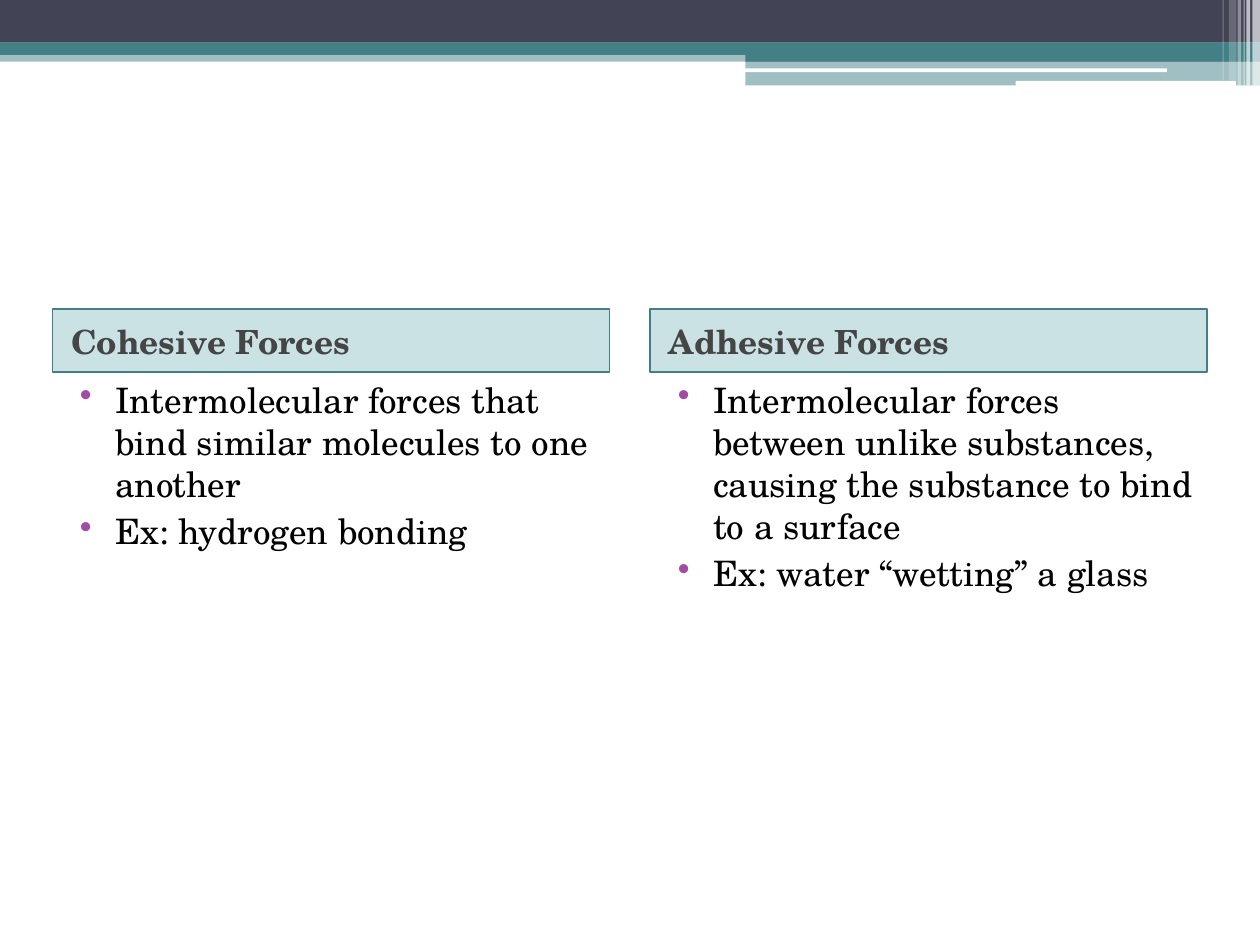
"""Build a slide comparing cohesive and adhesive forces."""
from lxml.etree import SubElement
from pptx import Presentation
from pptx.dml.color import RGBColor
from pptx.enum.shapes import MSO_SHAPE as Shape
from pptx.enum.text import MSO_ANCHOR as Anchor, PP_ALIGN as Align
from pptx.oxml.ns import qn
from pptx.util import Pt

FONT = "TeX Gyre Schola"
NAVY, TEAL, WHITE = "424456", "438086", "FFFFFF"
BANDS = [
    (Shape.RECTANGLE, 0, 28.8, 720, 6.48, TEAL, 50),
    (Shape.RECTANGLE, 0, 0, 720, 24.4, NAVY, 100),
    (Shape.RECTANGLE, 0, 24.2, 720, 7.2, TEAL, 100),
    (Shape.RECTANGLE, 426, 28, 294, 7.2, TEAL, 100),
    (Shape.RECTANGLE, 426, 34.8, 294, 14, TEAL, 50),
    (Shape.ROUNDED_RECTANGLE, 425.6, 39.1, 241.2, 2.16, WHITE, 100),
    (Shape.ROUNDED_RECTANGLE, 580.4, 46.3, 126, 2.88, WHITE, 100),
]
STRIPES = [
    (715.6, 4.4, 49, 65),
    (712.2, 2.16, 49, 65),
    (710.6, 0.72, 49, 60),
    (707.2, 2.16, 49, 40),
    (702.2, 4.32, 46.1, 20),
    (698.6, 0.72, 46.1, 30),
]
COLUMNS = [
    ("Cohesive Forces", [
        "Intermolecular forces that bind similar molecules to one another",
        "Ex: hydrogen bonding",
    ]),
    ("Adhesive Forces", [
        "Intermolecular forces between unlike substances, causing the substance to bind to a surface",
        "Ex: water “wetting” a glass",
    ]),
]
MARGIN, COLUMN_WIDTH, SLIDE_WIDTH = 30, 318.4, 720
HEADING_TOP, HEADING_HEIGHT, BODY_HEIGHT = 176.8, 36, 306


def color(value):
    return RGBColor.from_string(value)


def add_block(slide, kind, box, fill, opacity):
    shape = slide.shapes.add_shape(kind, *map(Pt, box))
    shape.shadow.inherit = False
    shape.line.fill.background()
    shape.fill.solid()
    shape.fill.fore_color.rgb = color(fill)
    if opacity < 100:
        rgb = shape.fill._xPr.find(qn("a:solidFill"))[0]
        SubElement(rgb, qn("a:alpha"), val=str(opacity * 1000))
    return shape


def write(frame, lines, size, text_color, indent, hanging=0, bold=False):
    frame.word_wrap = True
    for number, line in enumerate(lines):
        paragraph = frame.add_paragraph() if number else frame.paragraphs[0]
        paragraph.text = line
        paragraph.alignment = Align.LEFT
        paragraph.space_before = Pt(3)
        paragraph.font.name = FONT
        paragraph.font.size = Pt(size)
        paragraph.font.bold = bold
        paragraph.font.color.rgb = color(text_color)
        properties = paragraph._p.get_or_add_pPr()
        properties.set("marL", str(Pt(indent)))
        properties.set("indent", str(Pt(-hanging)))
        if hanging:
            bullet_color = SubElement(properties, qn("a:buClr"))
            SubElement(bullet_color, qn("a:srgbClr"), val="A04DA3")
            SubElement(properties, qn("a:buChar"), char="•")
            defaults = properties.find(qn("a:defRPr"))
            if defaults is not None:
                properties.append(defaults)


def add_column(slide, left, heading, points):
    box = (left, HEADING_TOP, COLUMN_WIDTH, HEADING_HEIGHT)
    shape = add_block(slide, Shape.RECTANGLE, box, "328E97", 25)
    shape.line.color.rgb = color(TEAL)
    shape.line.width = Pt(1)
    shape.text_frame.vertical_anchor = Anchor.MIDDLE
    write(shape.text_frame, [heading], 19, "454545", 3.6, bold=True)
    body = slide.shapes.add_textbox(
        Pt(left), Pt(HEADING_TOP + HEADING_HEIGHT), Pt(COLUMN_WIDTH), Pt(BODY_HEIGHT))
    write(body.text_frame, points, 20, "000000", 28.8, hanging=20.16)


def main():
    presentation = Presentation()
    presentation.slide_width, presentation.slide_height = Pt(SLIDE_WIDTH), Pt(540)
    slide = presentation.slides.add_slide(presentation.slide_layouts[6])
    for kind, left, top, width, height, fill, opacity in BANDS:
        add_block(slide, kind, (left, top, width, height), fill, opacity)
    for left, width, height, opacity in STRIPES:
        add_block(slide, Shape.RECTANGLE, (left, 0, width, height), WHITE, opacity)
    lefts = (MARGIN, SLIDE_WIDTH - MARGIN - COLUMN_WIDTH)
    for left, (heading, points) in zip(lefts, COLUMNS):
        add_column(slide, left, heading, points)
    presentation.save("out.pptx")


if __name__ == "__main__":
    main()
